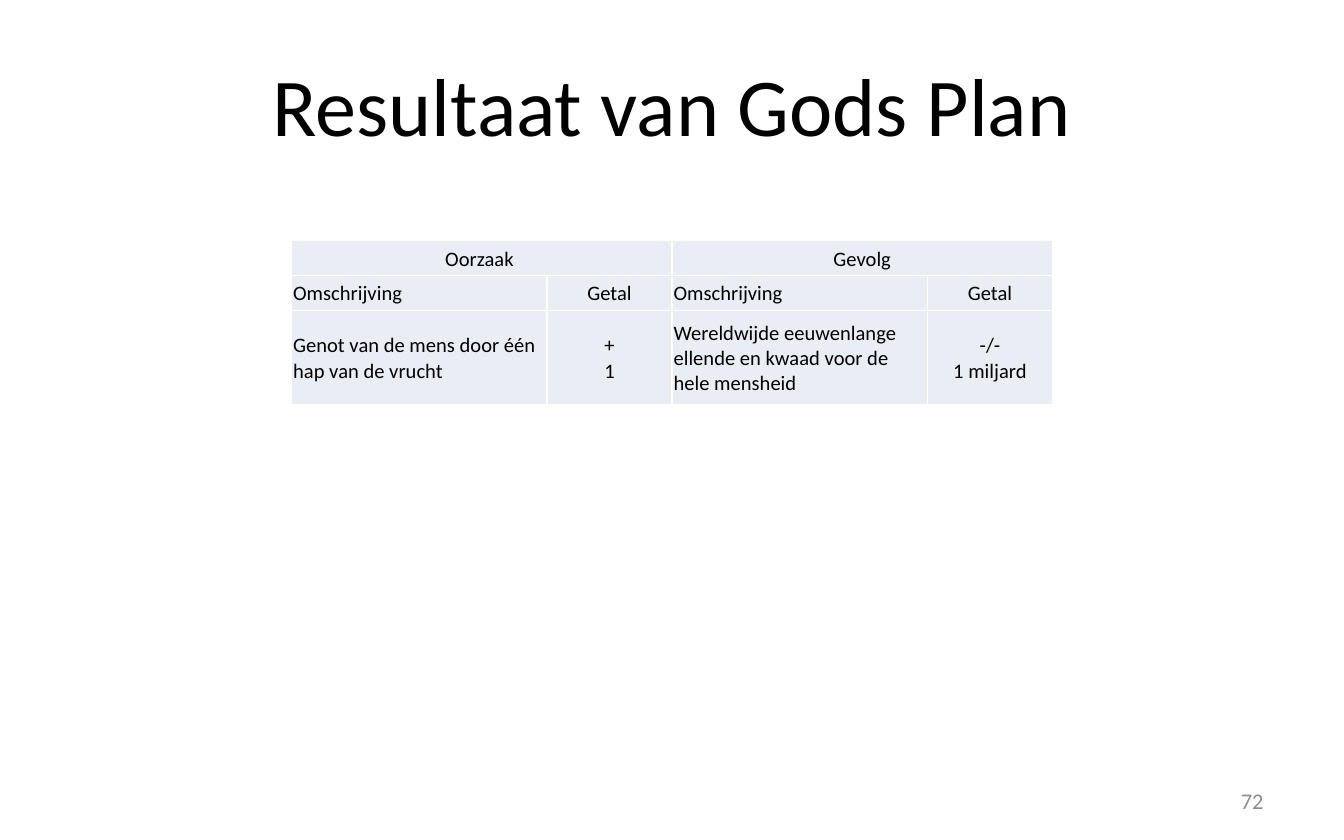
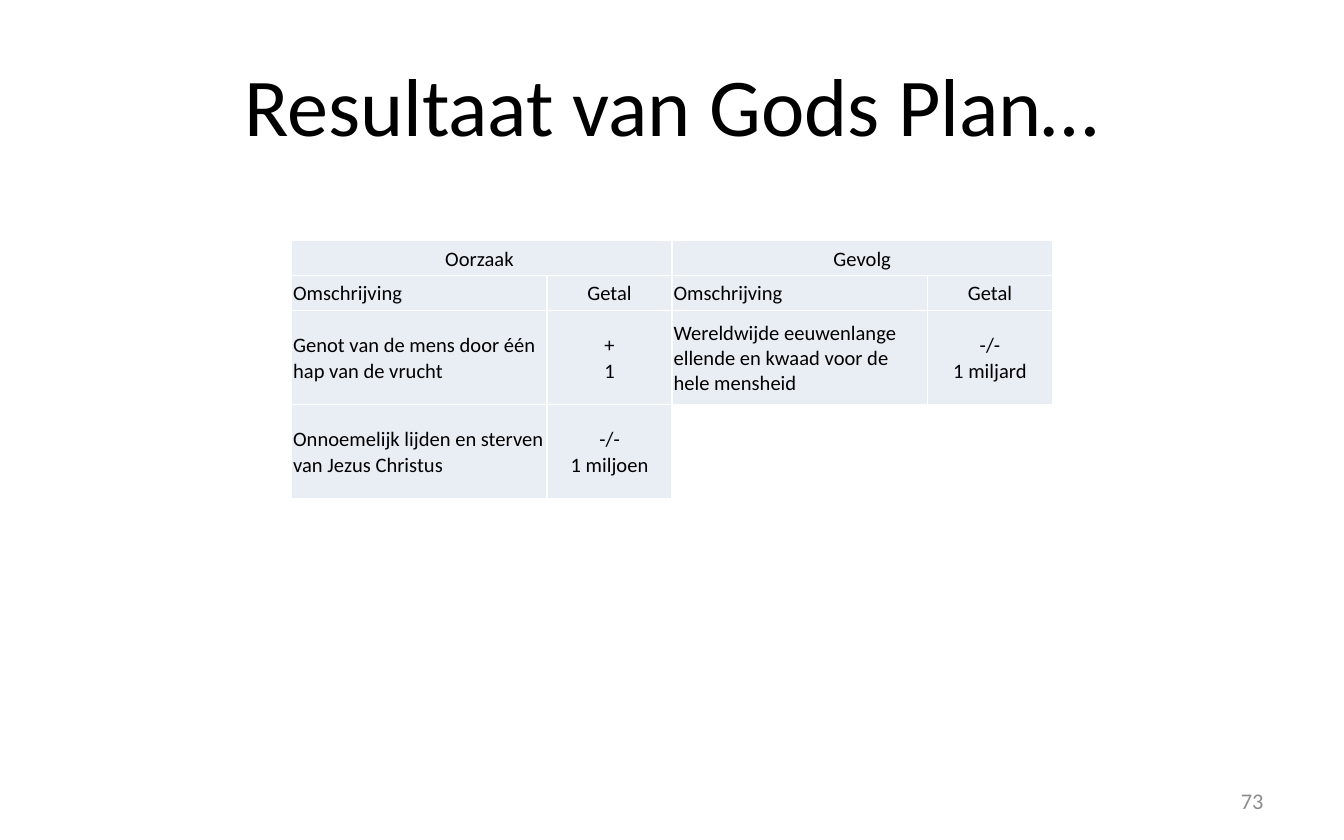
"""Build two slides that set cause and effect tables side by side."""
from lxml import etree
from pptx import Presentation
from pptx.dml.color import RGBColor
from pptx.enum.text import MSO_ANCHOR, PP_ALIGN
from pptx.oxml.ns import qn
from pptx.util import Cm, Pt

LEFT, CENTER, RIGHT = PP_ALIGN.LEFT, PP_ALIGN.CENTER, PP_ALIGN.RIGHT
MIDDLE = MSO_ANCHOR.MIDDLE

BLACK = RGBColor(0x00, 0x00, 0x00)
GREY = RGBColor(0x8C, 0x8C, 0x8C)
WHITE = RGBColor(0xFF, 0xFF, 0xFF)
CELL_FILL = RGBColor(0xE9, 0xED, 0xF4)

FONT = "Calibri"
TITLE_ONLY = 5
COL_WIDTHS = (4.83, 2.36)
HEAD_HEIGHT, BODY_HEIGHT = 0.66, 1.78
TABLE_TOP = 4.55
CAUSE_LEFT = 5.51
EFFECT_LEFT = CAUSE_LEFT + sum(COL_WIDTHS)

PLEASURE = ("Genot van de mens door één hap van de vrucht", "+\n1")
SUFFERING = ("Onnoemelijk lijden en sterven van Jezus Christus", "-/-\n1 miljoen")
MISERY = ("Wereldwijde eeuwenlange ellende en kwaad voor de hele mensheid",
          "-/-\n1 miljard")


class Deck:
    """Hold the shared style and the current slide."""

    def __init__(self):
        self.prs = Presentation()
        self.prs.slide_width, self.prs.slide_height = Cm(25.4), Cm(15.88)
        self.s = None

    def set_text(self, tf, text, size, align, color=BLACK):
        tf.word_wrap = True
        p = tf.paragraphs[0]
        p.text = text
        p.alignment = align
        p.font.name, p.font.size = FONT, Pt(size)
        p.font.color.rgb = color

    def slide(self, title, number):
        self.s = self.prs.slides.add_slide(self.prs.slide_layouts[TITLE_ONLY])
        sp = self.s.shapes.title
        sp.left, sp.top, sp.width, sp.height = Cm(1.27), Cm(0.64), Cm(22.86), Cm(2.64)
        sp.text_frame.vertical_anchor = MIDDLE
        self.set_text(sp.text_frame, title, 44, CENTER)
        self.page_number(number)

    def page_number(self, number):
        sp = self.s.shapes.add_textbox(Cm(18.21), Cm(14.71), Cm(5.92), Cm(0.84))
        sp.text_frame.vertical_anchor = MIDDLE
        self.set_text(sp.text_frame, str(number), 12, RIGHT, GREY)

    def borders(self, cell):
        tc_pr = cell._tc.get_or_add_tcPr()
        for side in ("a:lnL", "a:lnR", "a:lnT", "a:lnB"):
            ln = etree.SubElement(tc_pr, qn(side), w=str(Pt(1)))
            fill = etree.SubElement(ln, qn("a:solidFill"))
            etree.SubElement(fill, qn("a:srgbClr"), val=str(WHITE))

    def cell(self, cell, text, align):
        self.borders(cell)
        cell.fill.solid()
        cell.fill.fore_color.rgb = CELL_FILL
        cell.margin_left = cell.margin_right = cell.margin_top = Cm(0.03)
        cell.margin_bottom = 0
        cell.vertical_anchor = MIDDLE
        self.set_text(cell.text_frame, text, 11, align)

    def table(self, left, heading, *body):
        rows = [(heading, ""), ("Omschrijving", "Getal"), *body]
        heights = [HEAD_HEIGHT] * 2 + [BODY_HEIGHT] * len(body)
        table = self.s.shapes.add_table(
            len(rows), len(COL_WIDTHS), Cm(left), Cm(TABLE_TOP),
            Cm(sum(COL_WIDTHS)), Cm(sum(heights))).table
        table.first_row = table.horz_banding = False
        for col, width in zip(table.columns, COL_WIDTHS):
            col.width = Cm(width)
        for row, height in zip(table.rows, heights):
            row.height = Cm(height)
        for i, texts in enumerate(rows):
            for j, text in enumerate(texts):
                align = LEFT if i and not j else CENTER
                self.cell(table.cell(i, j), text, align)
        table.cell(0, 0).merge(table.cell(0, 1))


def main():
    deck = Deck()

    deck.slide("Resultaat van Gods Plan", 72)
    deck.table(CAUSE_LEFT, "Oorzaak ", PLEASURE)
    deck.table(EFFECT_LEFT, "Gevolg", MISERY)

    deck.slide("Resultaat van Gods Plan…", 73)
    deck.table(EFFECT_LEFT, "Gevolg", MISERY)
    deck.table(CAUSE_LEFT, "Oorzaak ", PLEASURE, SUFFERING)

    deck.prs.save("out.pptx")


if __name__ == "__main__":
    main()
